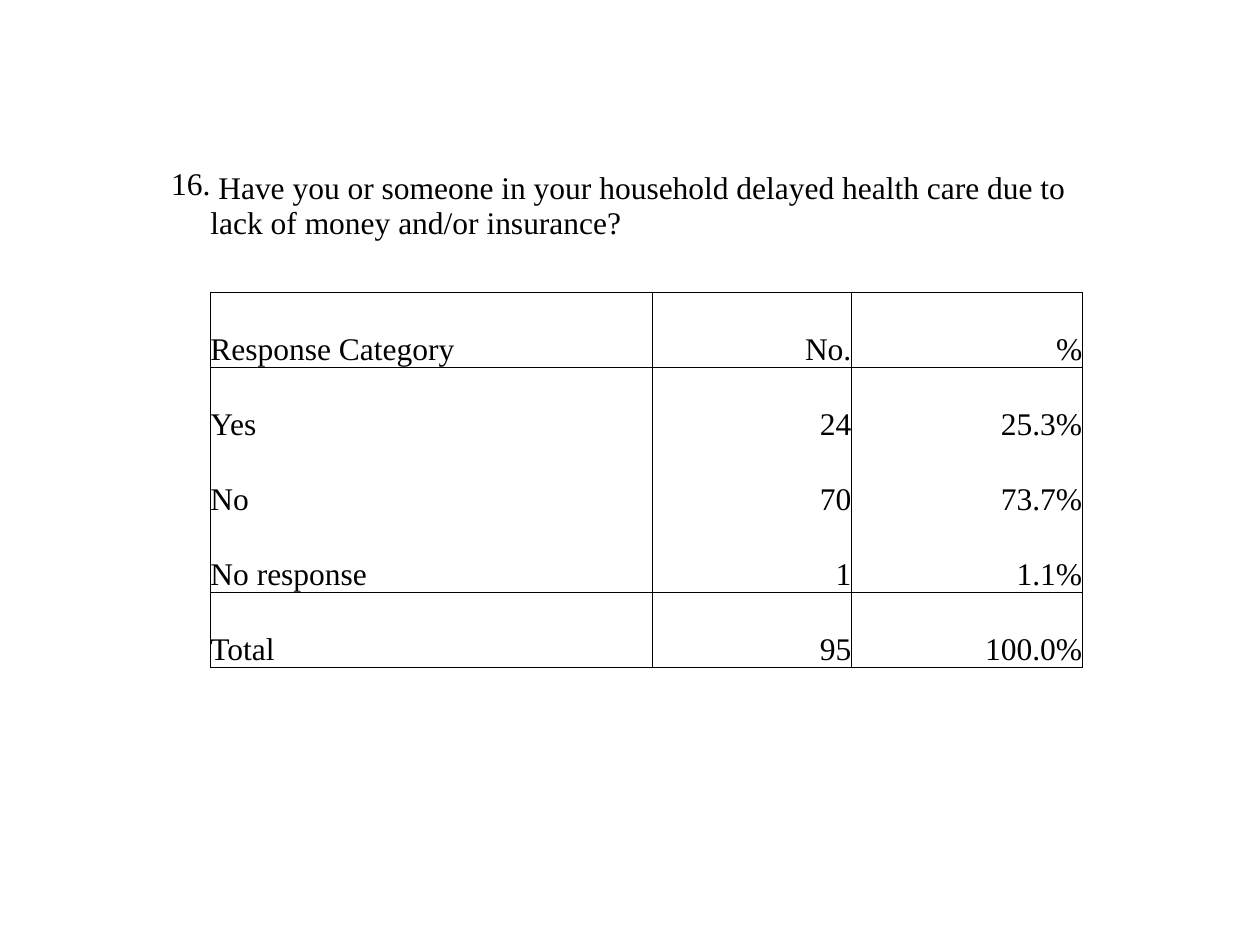
from dataclasses import dataclass

from lxml.etree import SubElement
from pptx import Presentation
from pptx.dml.color import RGBColor
from pptx.enum.text import MSO_ANCHOR as ANCHOR, PP_ALIGN as ALIGN
from pptx.oxml.ns import qn
from pptx.util import Inches, Pt


@dataclass(frozen=True)
class Theme:
    """Colours, type and line sizes of the slide."""
    font: str = "Times New Roman"
    ink: str = "000000"
    size: float = 18
    rule: float = 0.5


THEME = Theme()
COL_WIDTHS = (0.5, 3.5, 1.58, 1.83)
ROW_HEIGHTS = (0.58, 0.4) + (0.59,) * 5
FIRST_GRID_ROW = 2
RULED_EDGES = (2, 3, 6, 7)
NUMBER = "16."
QUESTION = (" Have you or someone in your household delayed health care "
            "due to lack of money and/or insurance?")
RESPONSES = (
    ("Response Category", "No.", "%"),
    ("Yes", "24", "25.3%"),
    ("No", "70", "73.7%"),
    ("No response", "1", "1.1%"),
    ("Total", "95", "100.0%"),
)


def write(cell, text, align=ALIGN.LEFT, anchor=ANCHOR.BOTTOM):
    """Put one styled run of text in a cell."""
    cell.vertical_anchor = anchor
    p = cell.text_frame.paragraphs[0]
    p.alignment = align
    r = p.add_run()
    r.text = text
    r.font.name = THEME.font
    r.font.size = Pt(THEME.size)
    r.font.color.rgb = RGBColor.from_string(THEME.ink)


def set_borders(cell, row, col):
    """Rule the edges of the response grid and clear all others."""
    in_grid, in_column = row >= FIRST_GRID_ROW, col >= 1
    edges = {
        "a:lnL": in_grid and in_column,
        "a:lnR": in_grid,
        "a:lnT": in_column and row in RULED_EDGES,
        "a:lnB": in_column and row + 1 in RULED_EDGES,
    }
    tc_pr = cell._tc.get_or_add_tcPr()
    for tag, ruled in edges.items():
        ln = SubElement(tc_pr, qn(tag), w=str(Pt(THEME.rule)))
        if ruled:
            fill = SubElement(ln, qn("a:solidFill"))
            SubElement(fill, qn("a:srgbClr"), val=THEME.ink)
        else:
            SubElement(ln, qn("a:noFill"))


def add_survey_table(slide, left, top, width, height):
    """Add the question and its response grid as one table in the given box."""
    table = slide.shapes.add_table(len(ROW_HEIGHTS), len(COL_WIDTHS),
                                   left, top, width, height).table
    table.first_row = table.horz_banding = False
    for column, share in zip(table.columns, COL_WIDTHS):
        column.width = int(width * share / sum(COL_WIDTHS))
    for row, share in zip(table.rows, ROW_HEIGHTS):
        row.height = int(height * share / sum(ROW_HEIGHTS))
    for r in range(len(ROW_HEIGHTS)):
        for c in range(len(COL_WIDTHS)):
            cell = table.cell(r, c)
            cell.margin_left = cell.margin_right = 0
            cell.margin_top = cell.margin_bottom = 0
            set_borders(cell, r, c)
            cell.fill.background()
    table.cell(0, 1).merge(table.cell(0, 3))
    write(table.cell(0, 0), NUMBER, ALIGN.RIGHT, ANCHOR.TOP)
    write(table.cell(0, 1), QUESTION)
    for r, values in enumerate(RESPONSES, FIRST_GRID_ROW):
        for c, value in enumerate(values, 1):
            write(table.cell(r, c), value, ALIGN.LEFT if c == 1 else ALIGN.RIGHT)


def main():
    """Build and save the slide."""
    prs = Presentation()
    prs.slide_width, prs.slide_height = Inches(10), Inches(7.5)
    s = prs.slides.add_slide(prs.slide_layouts[6])
    add_survey_table(s, Inches(1.17), Inches(1.33), Inches(7.42), Inches(3.97))
    prs.save("out.pptx")


if __name__ == "__main__":
    main()
